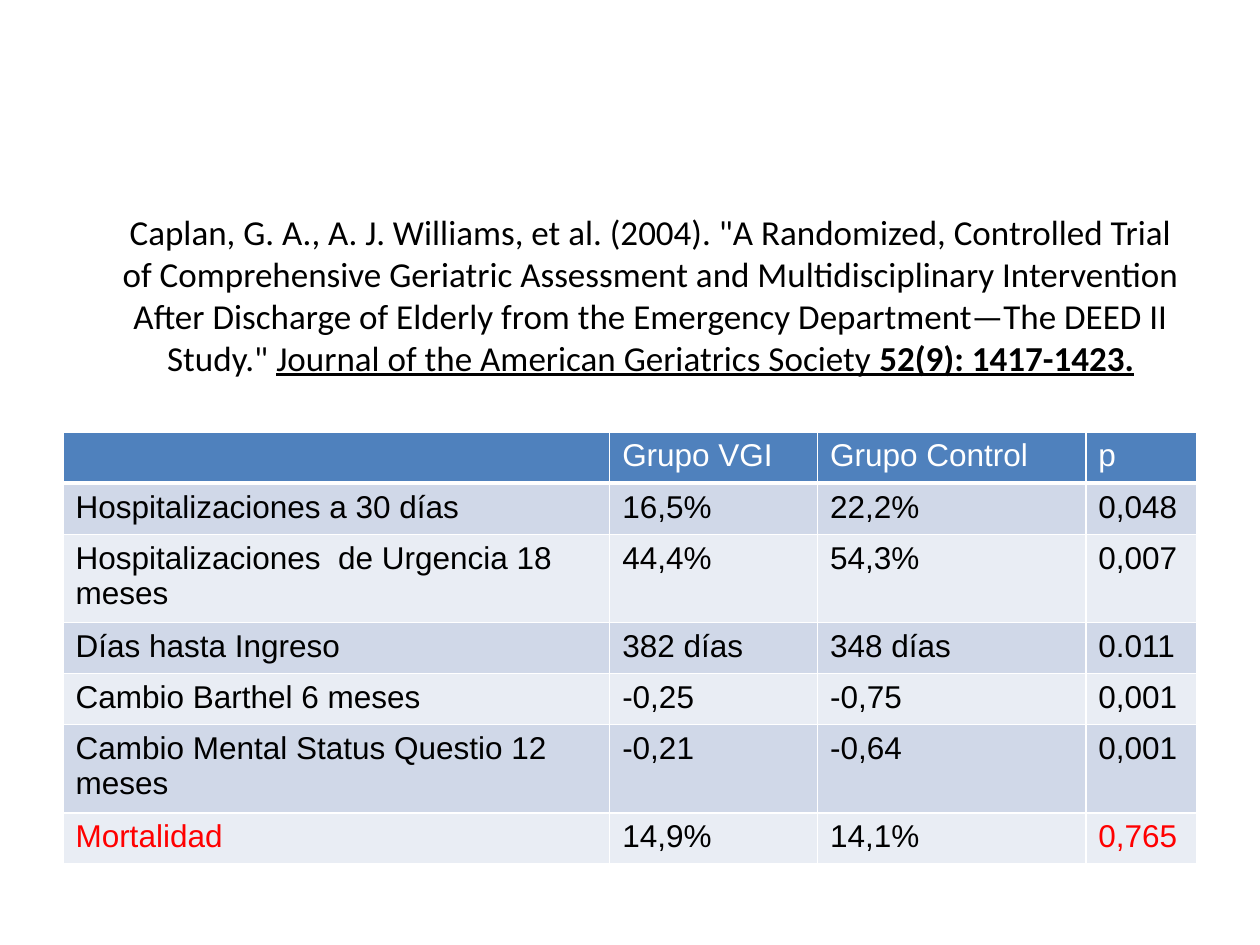
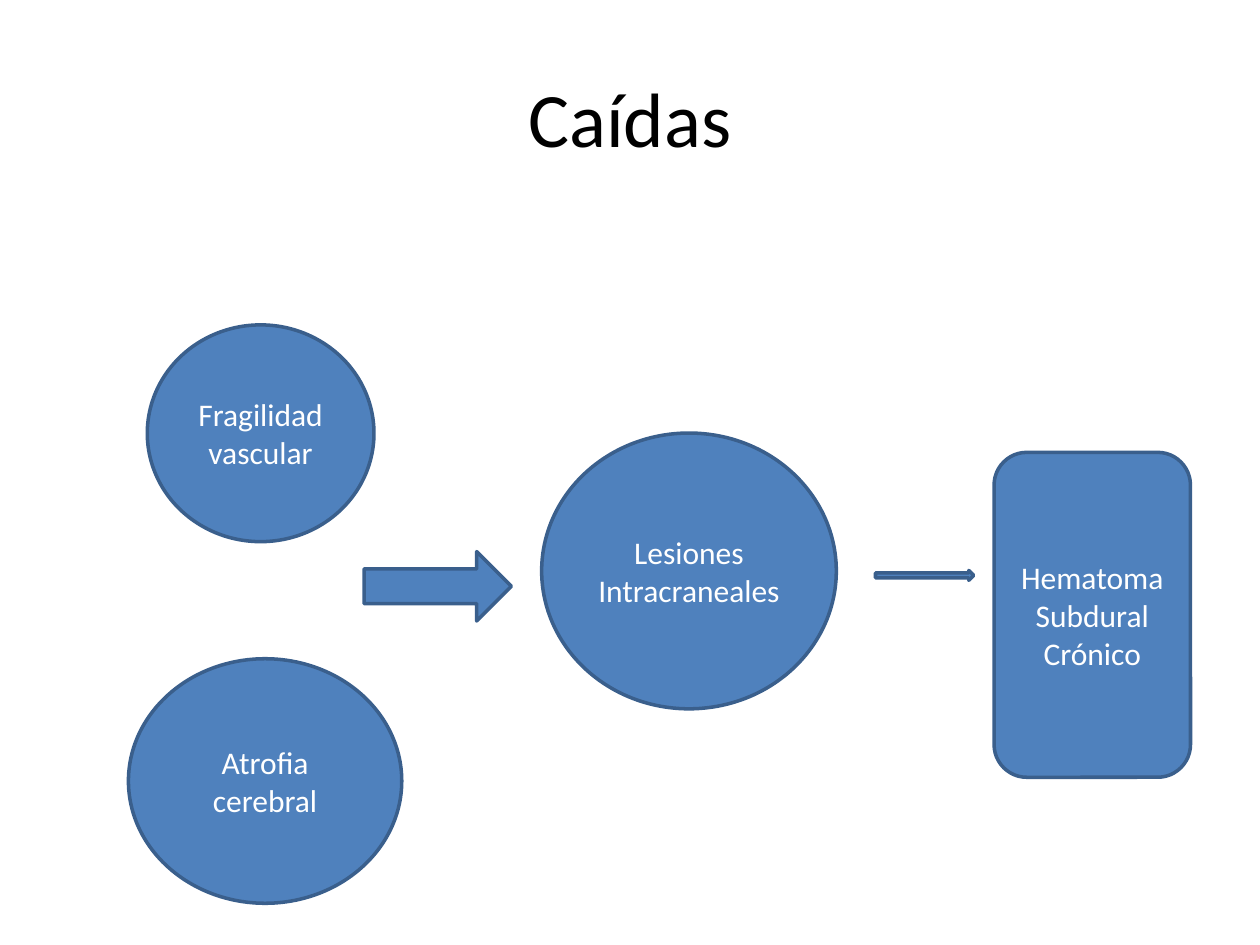
from dataclasses import dataclass

from lxml.etree import SubElement
from pptx import Presentation
from pptx.dml.color import RGBColor as Rgb
from pptx.enum.shapes import MSO_SHAPE as Preset
from pptx.enum.text import MSO_ANCHOR as Anchor, PP_ALIGN as Align
from pptx.oxml.ns import qn
from pptx.util import Cm, Pt


@dataclass(frozen=True)
class Theme:
    blue: str = "4F81BD"
    outline: str = "3A5F8C"
    bands: tuple = ("D0D8E8", "E9EDF4")
    white: str = "FFFFFF"
    black: str = "000000"
    alert: str = "FF0000"
    heading_font: str = "Calibri"
    table_font: str = "Arial"
    title_size: int = 44
    citation_size: int = 20
    body_size: int = 18
    outline_width: int = 2
    rule_width: int = 1
    header_rule_width: int = 3


THEME = Theme()

CITATION = (
    ('Caplan, G. A., A. J. Williams, et al. (2004). "A Randomized, Controlled Trial '
     'of Comprehensive Geriatric Assessment and Multidisciplinary Intervention After '
     'Discharge of Elderly from the Emergency Department—The DEED II Study." ', {}),
    ("Journal of the American Geriatrics Society ", {"underline": True}),
    ("52(9): 1417-1423.", {"underline": True, "bold": True}),
)

COLUMN_WIDTHS = (11.02, 4.19, 5.41, 2.24)
ROW_HEIGHT = 1.03
OUTCOMES = (
    ("", "Grupo VGI", "Grupo Control", "p"),
    ("Hospitalizaciones a 30 días", "16,5%", "22,2%", "0,048"),
    ("Hospitalizaciones  de Urgencia 18 meses", "44,4%", "54,3%", "0,007"),
    ("Días hasta Ingreso", "382 días", "348 días", "0.011"),
    ("Cambio Barthel 6 meses", "-0,25", "-0,75", "0,001"),
    ("Cambio Mental Status Questio 12 meses", "-0,21", "-0,64", "0,001"),
    ("Mortalidad", "14,9%", "14,1%", "0,765"),
)
ALERT_CELLS = {"Mortalidad", "0,765"}

# Preset, wording, then left, top, width, height inside the diagram in cm
FALL_STEPS = (
    (Preset.OVAL, "Fragilidad vascular", (0.38, 0, 4.57, 4.37)),
    (Preset.OVAL, "Atrofia cerebral", (0, 6.73, 5.51, 4.93)),
    (Preset.RIGHT_ARROW, "", (4.75, 4.57, 2.97, 1.4)),
    (Preset.OVAL, "Lesiones Intracraneales", (8.33, 2.18, 5.94, 5.56)),
    (Preset.ROUNDED_RECTANGLE, "Hematoma Subdural Crónico", (17.45, 2.57, 3.96, 6.55)),
    (Preset.RIGHT_ARROW, "", (15.06, 4.95, 1.98, 0.2)),
)


def apply_format(target, values):
    for name, value in values.items():
        setattr(target, name, value)


def add_run(paragraph, wording, color, **font_values):
    run = paragraph.add_run()
    run.text = wording
    apply_format(run.font, font_values)
    run.font.color.rgb = Rgb.from_string(color)


def add_title(slide, box, parts, size):
    """Centred heading made of (wording, font values) parts."""
    frame = slide.shapes.add_textbox(*map(Cm, box)).text_frame
    apply_format(frame, {"word_wrap": True, "vertical_anchor": Anchor.MIDDLE})
    heading = frame.paragraphs[0]
    heading.alignment = Align.CENTER
    for wording, emphasis in parts:
        add_run(heading, wording, THEME.black, name=THEME.heading_font,
                size=Pt(size), **emphasis)


def set_cell_rules(cell, bottom_width):
    """White rules on all four sides, placed ahead of the cell fill."""
    properties = cell._tc.get_or_add_tcPr()
    widths = {"lnL": THEME.rule_width, "lnR": THEME.rule_width,
              "lnT": THEME.rule_width, "lnB": bottom_width}
    for position, (side, width) in enumerate(widths.items()):
        rule = SubElement(properties, qn(f"a:{side}"), w=str(Pt(width)))
        fill = SubElement(rule, qn("a:solidFill"))
        SubElement(fill, qn("a:srgbClr"), val=THEME.white)
        properties.insert(position, rule)


def add_outcome_table(slide, left, top):
    table = slide.shapes.add_table(
        len(OUTCOMES), len(COLUMN_WIDTHS), Cm(left), Cm(top),
        Cm(sum(COLUMN_WIDTHS)), Cm(ROW_HEIGHT * len(OUTCOMES))).table
    for column, width in zip(table.columns, COLUMN_WIDTHS):
        column.width = Cm(width)
    for row_number, outcome in enumerate(OUTCOMES):
        table.rows[row_number].height = Cm(ROW_HEIGHT)
        is_header = row_number == 0
        fill = THEME.blue if is_header else THEME.bands[(row_number - 1) % 2]
        for cell, wording in zip(table.rows[row_number].cells, outcome):
            cell.fill.solid()
            cell.fill.fore_color.rgb = Rgb.from_string(fill)
            set_cell_rules(cell, THEME.header_rule_width if is_header else THEME.rule_width)
            if wording:
                color = (THEME.white if is_header else
                         THEME.alert if wording in ALERT_CELLS else THEME.black)
                add_run(cell.text_frame.paragraphs[0], wording, color, bold=False,
                        name=THEME.table_font, size=Pt(THEME.body_size))


def add_fall_diagram(slide, left, top):
    for preset, wording, (dx, dy, width, height) in FALL_STEPS:
        step = slide.shapes.add_shape(
            preset, Cm(left + dx), Cm(top + dy), Cm(width), Cm(height))
        step.shadow.inherit = False
        step.fill.solid()
        step.fill.fore_color.rgb = Rgb.from_string(THEME.blue)
        step.line.color.rgb = Rgb.from_string(THEME.outline)
        step.line.width = Pt(THEME.outline_width)
        if wording:
            frame = step.text_frame
            apply_format(frame, {"word_wrap": True, "vertical_anchor": Anchor.MIDDLE})
            frame.paragraphs[0].alignment = Align.CENTER
            add_run(frame.paragraphs[0], wording, THEME.white,
                    name=THEME.heading_font, size=Pt(THEME.body_size))


def build_trial_slide(slide):
    add_title(slide, (2.11, 4.34, 22.02, 3.18), CITATION, THEME.citation_size)
    add_outcome_table(slide, 1.27, 8.71)


def build_falls_slide(slide):
    add_title(slide, (1.27, 0.76, 22.86, 3.18), (("Caídas", {}),), THEME.title_size)
    add_fall_diagram(slide, 2.59, 6.55)


def main():
    deck = Presentation()
    apply_format(deck, {"slide_width": Cm(25.4), "slide_height": Cm(19.05)})
    blank = deck.slide_layouts[6]
    for build in (build_trial_slide, build_falls_slide):
        build(deck.slides.add_slide(blank))
    deck.save("out.pptx")


if __name__ == "__main__":
    main()
